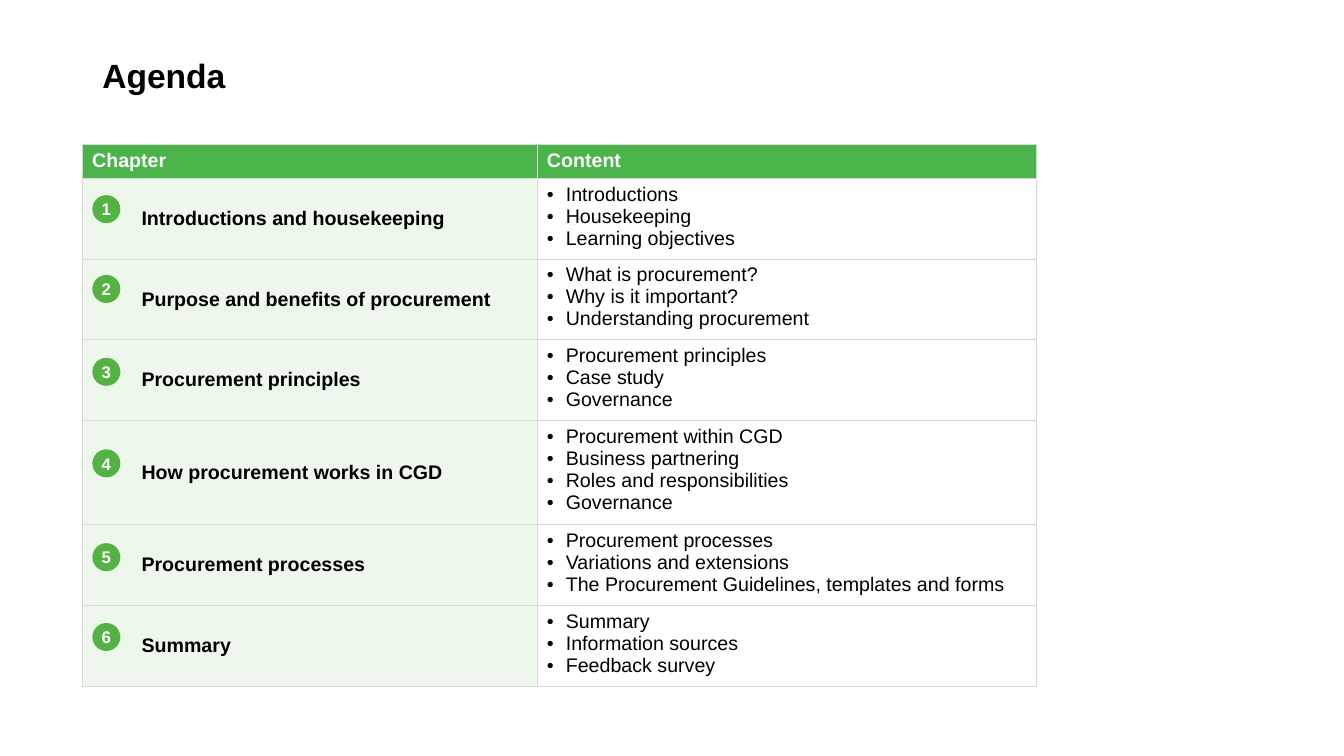
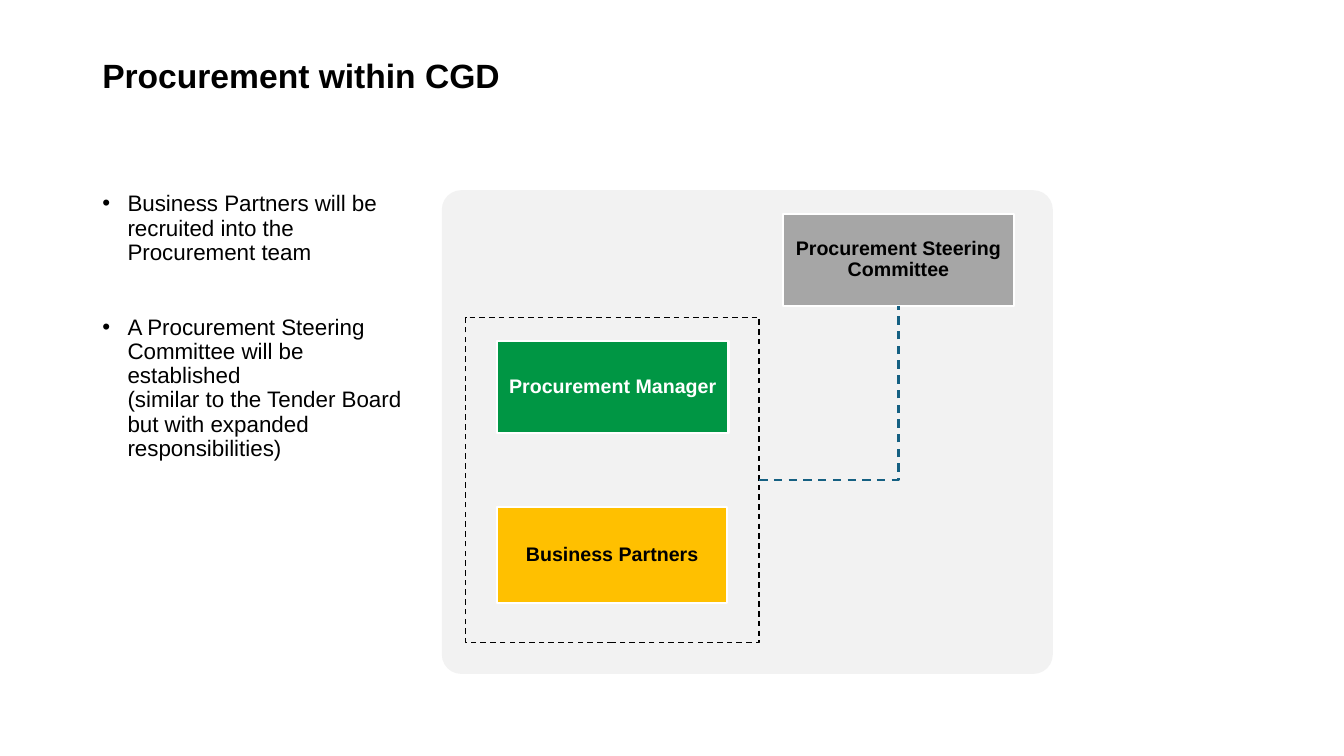
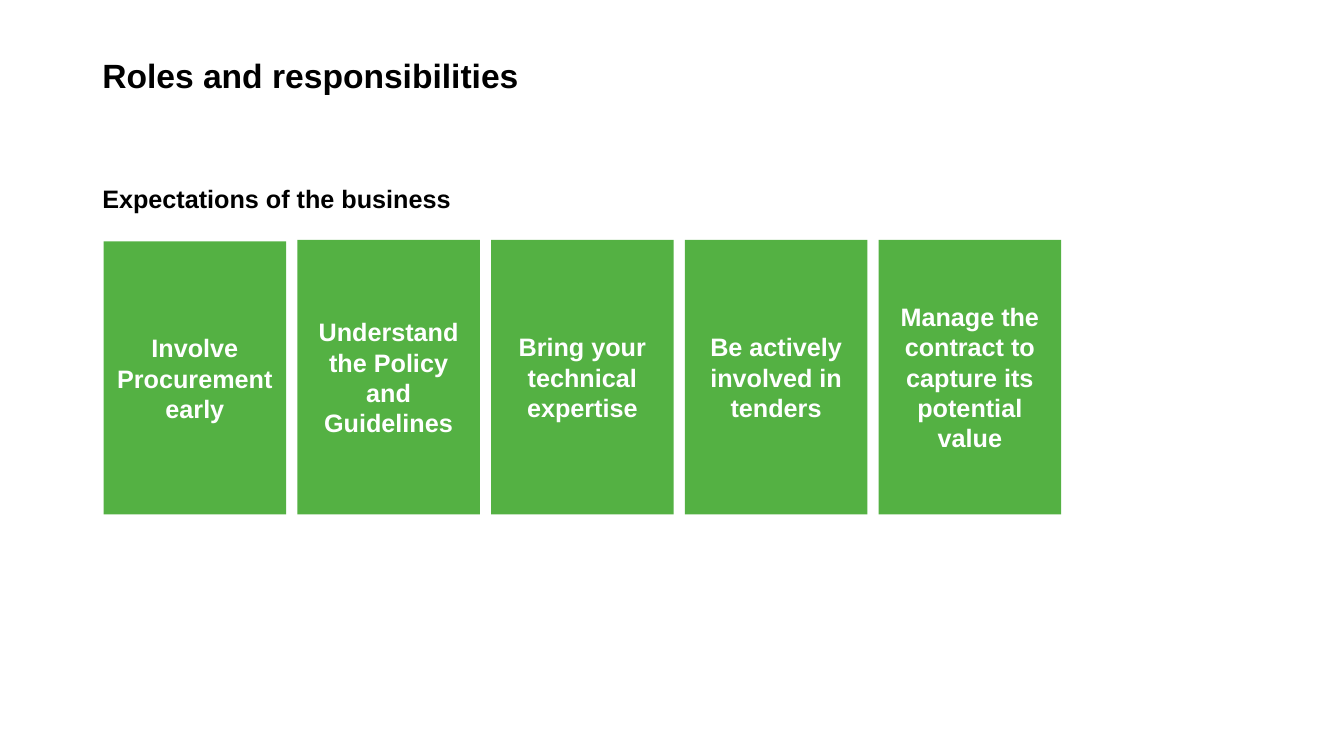
from copy import deepcopy
from dataclasses import dataclass

from lxml import etree
from pptx import Presentation
from pptx import util as u
from pptx.dml import color as dml
from pptx.enum import dml as lines, shapes, text
from pptx.oxml import ns

Pt = u.Pt
FONT = "Arial"
MARGIN = 66
COLORS = {
    "black": "000000",
    "white": "FFFFFF",
    "header": "4AB44A",
    "green": "54B143",
    "border": "D9D9D9",
    "panel": "F2F2F2",
    "manager": "009644",
    "partners": "FFC000",
    "committee": "A6A6A6",
    "link": "156082",
}


@dataclass(frozen=True)
class Chapter:
    name: str
    topics: tuple[str, ...]
    badge_top: float
    height: float = 54


@dataclass(frozen=True)
class Box:
    x: float
    y: float
    w: float
    h: float
    fill: str = ""
    line: str = ""
    weight: float = 1
    dashed: bool = False
    kind: shapes.MSO_SHAPE = shapes.MSO_SHAPE.RECTANGLE


@dataclass(frozen=True)
class Role:
    name: str
    box: Box
    color: str


CHAPTERS = (
    Chapter("Introductions and housekeeping",
            ("Introductions", "Housekeeping", "Learning objectives"), 139.4),
    Chapter("Purpose and benefits of procurement",
            ("What is procurement?", "Why is it important?",
             "Understanding procurement"), 196.4),
    Chapter("Procurement principles",
            ("Procurement principles", "Case study", "Governance"), 255.6),
    Chapter("How procurement works in CGD",
            ("Procurement within CGD", "Business partnering",
             "Roles and responsibilities", "Governance"), 321, 70),
    Chapter("Procurement processes",
            ("Procurement processes", "Variations and extensions",
             "The Procurement Guidelines, templates and forms"), 388),
    Chapter("Summary",
            ("Summary", "Information sources", "Feedback survey"), 445),
)

PANEL = Box(315.6, 135.9, 436.4, 345.5, "panel",
            kind=shapes.MSO_SHAPE.ROUNDED_RECTANGLE)
TEAM = Box(332.5, 226.6, 209.8, 232.4, line="black", dashed=True)
ROLES = (
    Role("Procurement Manager",
         Box(355.2, 243.7, 165.2, 65.5, "manager", "white", 1.5), "white"),
    Role("Business Partners",
         Box(355.2, 362, 164.2, 68.9, "partners", "white", 1.5), "black"),
    Role("Procurement Steering Committee",
         Box(559.2, 152.8, 165.2, 65.5, "committee", "white", 1.5), "black"),
)
EXPECTATIONS = (
    "Involve Procurement early",
    "Understand the Policy and Guidelines",
    "Bring your technical expertise",
    "Be actively involved in tenders",
    "Manage the contract to capture its potential value",
)


def rgb(name: str) -> dml.RGBColor:
    return dml.RGBColor.from_string(COLORS[name])


def write(tf, *paragraphs: str, size: float, color: str = "black",
          bold: bool = False, align=text.PP_ALIGN.LEFT, indent: float = 0,
          spacing: float = 1, gap: float = 0) -> None:
    for i, words in enumerate(paragraphs):
        p = tf.paragraphs[0] if i == 0 else tf.add_paragraph()
        p.text = words
        p.alignment = align
        p.line_spacing = spacing
        if i and gap:
            p.space_before = Pt(gap)
        if indent:
            pPr = p._p.get_or_add_pPr()
            pPr.set("marL", str(Pt(indent)))
            pPr.set("indent", str(-Pt(indent)))
            etree.SubElement(pPr, ns.qn("a:buFont")).set("typeface", FONT)
            etree.SubElement(pPr, ns.qn("a:buChar")).set("char", "•")
        for r in p.runs:
            r.font.name = FONT
            r.font.size = Pt(size)
            r.font.bold = bold
            r.font.color.rgb = rgb(color)
        for br in p._p.findall(ns.qn("a:br")):
            br.append(deepcopy(p.runs[0]._r.rPr))


def set_frame(tf, margin: float | None = None, wrap: bool = True,
              anchor=text.MSO_ANCHOR.MIDDLE):
    tf.word_wrap = wrap
    tf.vertical_anchor = anchor
    if margin is not None:
        tf.margin_left = tf.margin_right = Pt(margin)
        tf.margin_top = tf.margin_bottom = Pt(margin)
    return tf


def add_text(s, x: float, y: float, w: float, h: float,
             anchor=text.MSO_ANCHOR.MIDDLE):
    sp = s.shapes.add_textbox(Pt(x), Pt(y), Pt(w), Pt(h))
    return set_frame(sp.text_frame, anchor=anchor)


def add_box(s, box: Box):
    sp = s.shapes.add_shape(box.kind, Pt(box.x), Pt(box.y), Pt(box.w), Pt(box.h))
    sp.shadow.inherit = False
    if box.fill:
        sp.fill.solid()
        sp.fill.fore_color.rgb = rgb(box.fill)
    else:
        sp.fill.background()
    if box.line:
        sp.line.color.rgb = rgb(box.line)
        sp.line.width = Pt(box.weight)
        if box.dashed:
            sp.line.dash_style = lines.MSO_LINE.DASH
    else:
        sp.line.fill.background()
    return sp


def add_slide(prs, title: str):
    s = prs.slides.add_slide(prs.slide_layouts[6])
    write(add_text(s, MARGIN, 28.5, 828, 54), title, size=24, bold=True,
          spacing=0.9)
    return s


def style_cell(cell, fill: str, opacity: int = 100) -> None:
    cell.fill.solid()
    cell.fill.fore_color.rgb = rgb(fill)
    tcPr = cell._tc.get_or_add_tcPr()
    if opacity < 100:
        clr = tcPr.find(".//" + ns.qn("a:srgbClr"))
        etree.SubElement(clr, ns.qn("a:alpha")).set("val", str(opacity * 1000))
    for i, side in enumerate(("lnL", "lnR", "lnT", "lnB")):
        ln = etree.Element(ns.qn("a:" + side), w=str(Pt(0.5)))
        solid = etree.SubElement(ln, ns.qn("a:solidFill"))
        etree.SubElement(solid, ns.qn("a:srgbClr")).set("val", COLORS["border"])
        tcPr.insert(i, ln)


def build_agenda(prs) -> None:
    s = add_slide(prs, "Agenda")
    widths = (324.9, 357.1)
    heights = (22, *(c.height for c in CHAPTERS))
    table = s.shapes.add_table(len(heights), len(widths), Pt(58.6), Pt(103.2),
                               Pt(sum(widths)), Pt(sum(heights))).table
    table.horz_banding = False
    for column, width in zip(table.columns, widths):
        column.width = Pt(width)
    for row, height in zip(table.rows, heights):
        row.height = Pt(height)
    for i, heading in enumerate(("Chapter", "Content")):
        cell = table.cell(0, i)
        style_cell(cell, "header")
        write(cell.text_frame, heading, size=14, color="white", bold=True)
    for number, chapter in enumerate(CHAPTERS, 1):
        name, topics = table.cell(number, 0), table.cell(number, 1)
        style_cell(name, "green", 10)
        name.margin_left, name.margin_right = Pt(42.5), Pt(20)
        name.vertical_anchor = text.MSO_ANCHOR.MIDDLE
        write(name.text_frame, chapter.name, size=14, bold=True)
        style_cell(topics, "white")
        write(topics.text_frame, *chapter.topics, size=14, indent=13.5)
        badge = add_box(s, Box(MARGIN, chapter.badge_top, 20, 20, "green",
                               kind=shapes.MSO_SHAPE.OVAL))
        write(set_frame(badge.text_frame, 0, wrap=False), str(number), size=12,
              color="white", bold=True, align=text.PP_ALIGN.CENTER)


def build_structure(prs) -> None:
    s = add_slide(prs, "Procurement within CGD")
    panel = add_box(s, PANEL)
    panel.adjustments[0] = 0.04
    team = add_box(s, TEAM)
    write(add_text(s, MARGIN, 134, 239, 329, text.MSO_ANCHOR.TOP),
          "Business Partners will be recruited into the Procurement team",
          "A Procurement Steering Committee will be established\v"
          "(similar to the Tender Board but with expanded responsibilities)",
          size=16, indent=18, spacing=0.9, gap=36.5)
    for role in ROLES:
        sp = add_box(s, role.box)
        write(set_frame(sp.text_frame, 0.7), role.name, size=14,
              color=role.color, bold=True, align=text.PP_ALIGN.CENTER,
              spacing=0.9)
    link = s.shapes.add_connector(shapes.MSO_CONNECTOR.ELBOW, 0, 0, 0, 0)
    link.begin_connect(team, 3)
    link.end_connect(sp, 2)
    link.line.color.rgb = rgb("link")
    link.line.width = Pt(1.5)
    link.line.dash_style = lines.MSO_LINE.DASH
    spPr = link._element.spPr
    spPr.find(ns.qn("a:prstGeom")).set("prst", "bentConnector2")
    etree.SubElement(spPr, ns.qn("a:effectLst"))


def build_expectations(prs) -> None:
    s = add_slide(prs, "Roles and responsibilities")
    write(add_text(s, MARGIN, 122, 272, 39), "Expectations of the business",
          size=18, bold=True)
    left, width, gap, bottom = 74, 130.4, 8, 367.5
    for i, words in enumerate(EXPECTATIONS):
        top = 171.3 if i else 172.5
        sp = add_box(s, Box(left + i * (width + gap), top, width, bottom - top,
                            "green"))
        write(set_frame(sp.text_frame), words, size=18, color="white", bold=True,
              align=text.PP_ALIGN.CENTER)


def main() -> None:
    prs = Presentation()
    prs.slide_width, prs.slide_height = Pt(960), Pt(540)
    build_agenda(prs)
    build_structure(prs)
    build_expectations(prs)
    prs.save("out.pptx")


if __name__ == "__main__":
    main()
